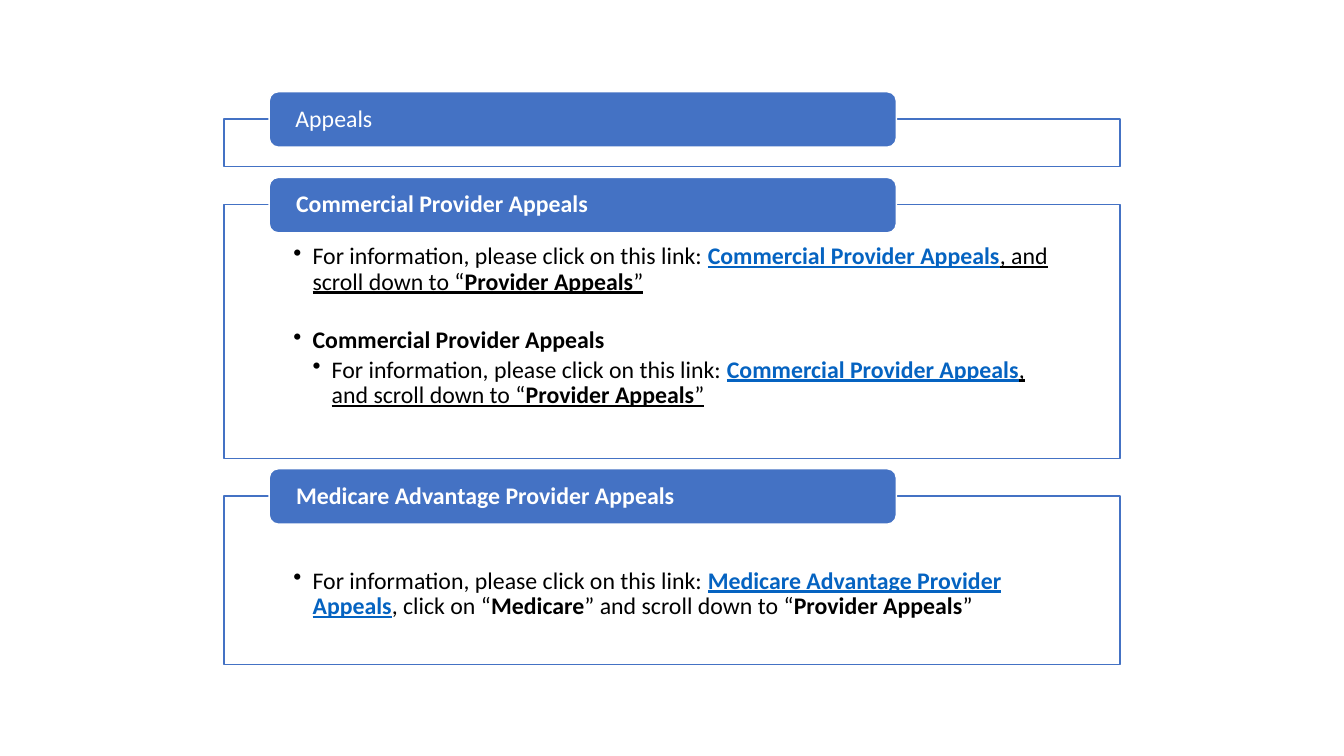
import pptx
import pptx.dml.color
import pptx.enum.shapes
import pptx.enum.text
import pptx.oxml
import pptx.oxml.ns
import pptx.util

COLORS = {"blue": "4472C4", "link": "0563C1", "white": "FFFFFF", "black": "000000"}
PX = 9144
INFO = "For information, please click on this link: "
COMMERCIAL = "Commercial Provider Appeals"
MEDICARE = "Medicare Advantage Provider Appeals"
FRAME_X, FRAME_W = 222, 889
BAR_X, BAR_W, BAR_H = 267, 622, 55
BAR_RISE = 27
INDENT = 19


class Deck:
    """Holds the text style and the current slide, and draws its elements."""

    def __init__(self, width, height, font="Calibri", size=17):
        self.prs = pptx.Presentation()
        self.prs.slide_width = self.px(width)
        self.prs.slide_height = self.px(height)
        self.font, self.size = font, size
        self.slide = self.prs.slides.add_slide(self.prs.slide_layouts[5])

    def px(self, n):
        return pptx.util.Emu(n * PX)

    def color(self, name):
        return pptx.dml.color.RGBColor.from_string(COLORS[name])

    def shape(self, kind, x, y, w, h, fill, line):
        sp = self.slide.shapes.add_shape(kind, *map(self.px, (x, y, w, h)))
        sp.shadow.inherit = False
        sp.fill.solid()
        sp.fill.fore_color.rgb = self.color(fill)
        sp.line.color.rgb = self.color(line)
        sp.line.width = pptx.util.Pt(1)
        return sp

    def text_area(self, sp, left, top, right, bottom, anchor):
        tf = sp.text_frame
        tf.word_wrap = True
        tf.auto_size = pptx.enum.text.MSO_AUTO_SIZE.NONE
        tf.vertical_anchor = anchor
        tf.margin_left, tf.margin_top = self.px(left), self.px(top)
        tf.margin_right, tf.margin_bottom = self.px(right), self.px(bottom)
        return tf

    def paragraph_style(self, p):
        p.alignment = pptx.enum.text.PP_ALIGN.LEFT
        p.line_spacing = 0.9
        p.font.name = self.font
        p.font.size = pptx.util.Pt(self.size)

    def heading(self, sp, text, bold):
        tf = self.text_area(sp, 24, 0, 24, 0, pptx.enum.text.MSO_ANCHOR.MIDDLE)
        tf.text = text
        p = tf.paragraphs[0]
        self.paragraph_style(p)
        p.font.bold = bold
        p.font.color.rgb = self.color("white")

    def frame(self, y, h):
        sp = self.shape(pptx.enum.shapes.MSO_SHAPE.RECTANGLE,
                        FRAME_X, y, FRAME_W, h, "white", "blue")
        clr = sp.fill._xPr.find(".//" + pptx.oxml.ns.qn("a:srgbClr"))
        alpha = pptx.oxml.parse_xml(
            "<a:alpha %s val='90000'/>" % pptx.oxml.ns.nsdecls("a"))
        clr.append(alpha)
        return sp

    def bar(self, frame_y):
        return self.shape(pptx.enum.shapes.MSO_SHAPE.ROUNDED_RECTANGLE,
                          BAR_X, frame_y - BAR_RISE, BAR_W, BAR_H, "blue", "white")

    def title(self, frame_y, text):
        sp = self.slide.shapes.title
        sp.left, sp.top = self.px(BAR_X + 2), self.px(frame_y - BAR_RISE + 2)
        sp.width, sp.height = self.px(BAR_W - 4), self.px(BAR_H - 4)
        self.heading(sp, text, False)
        self.slide.shapes.element.append(sp.element)

    def bullets(self, sp, top, items):
        tf = self.text_area(sp, 69, top, 69, 13, pptx.enum.text.MSO_ANCHOR.TOP)
        for i, (level, before, runs) in enumerate(items):
            p = tf.add_paragraph() if i else tf.paragraphs[0]
            self.paragraph_style(p)
            p.level = level
            p.space_before = pptx.util.Pt(before)
            p.space_after = pptx.util.Pt(2.5)
            for text, style in runs:
                r = p.add_run()
                r.text = text
                r.font.bold = "b" in style
                r.font.underline = "u" in style
                r.font.color.rgb = self.color("link" if "l" in style else "black")
            pPr = p._p.get_or_add_pPr()
            pPr.set("marL", str(self.px(INDENT * (level + 1))))
            pPr.set("indent", str(self.px(-INDENT)))
            bullet = pptx.oxml.parse_xml(
                "<a:buChar %s char='•'/>" % pptx.oxml.ns.nsdecls("a"))
            pPr.find(pptx.oxml.ns.qn("a:defRPr")).addprevious(bullet)


def main():
    deck = Deck(1333, 750)
    commercial_link = [(INFO, ""), (COMMERCIAL, "blu"), (", and scroll down to “", "u"),
                       ("Provider Appeals", "bu"), ("”", "u")]
    medicare_link = [(INFO, ""), (MEDICARE, "blu"), (", click on “", ""),
                     ("Medicare", "b"), ("” and scroll down to “", ""),
                     ("Provider Appeals", "b"), ("”", "")]
    sections = [
        (203, 252, COMMERCIAL, 39, [(0, 0, commercial_link),
                                    (0, 21, [(COMMERCIAL, "b")]),
                                    (1, 0, commercial_link)]),
        (492, 167, MEDICARE, 72, [(0, 0, medicare_link)]),
    ]

    deck.frame(118, 47)
    deck.bar(118)
    deck.title(118, "Appeals")
    for y, h, heading, top, items in sections:
        deck.bullets(deck.frame(y, h), top, items)
        deck.heading(deck.bar(y), heading, True)
    deck.prs.save("out.pptx")


if __name__ == "__main__":
    main()
